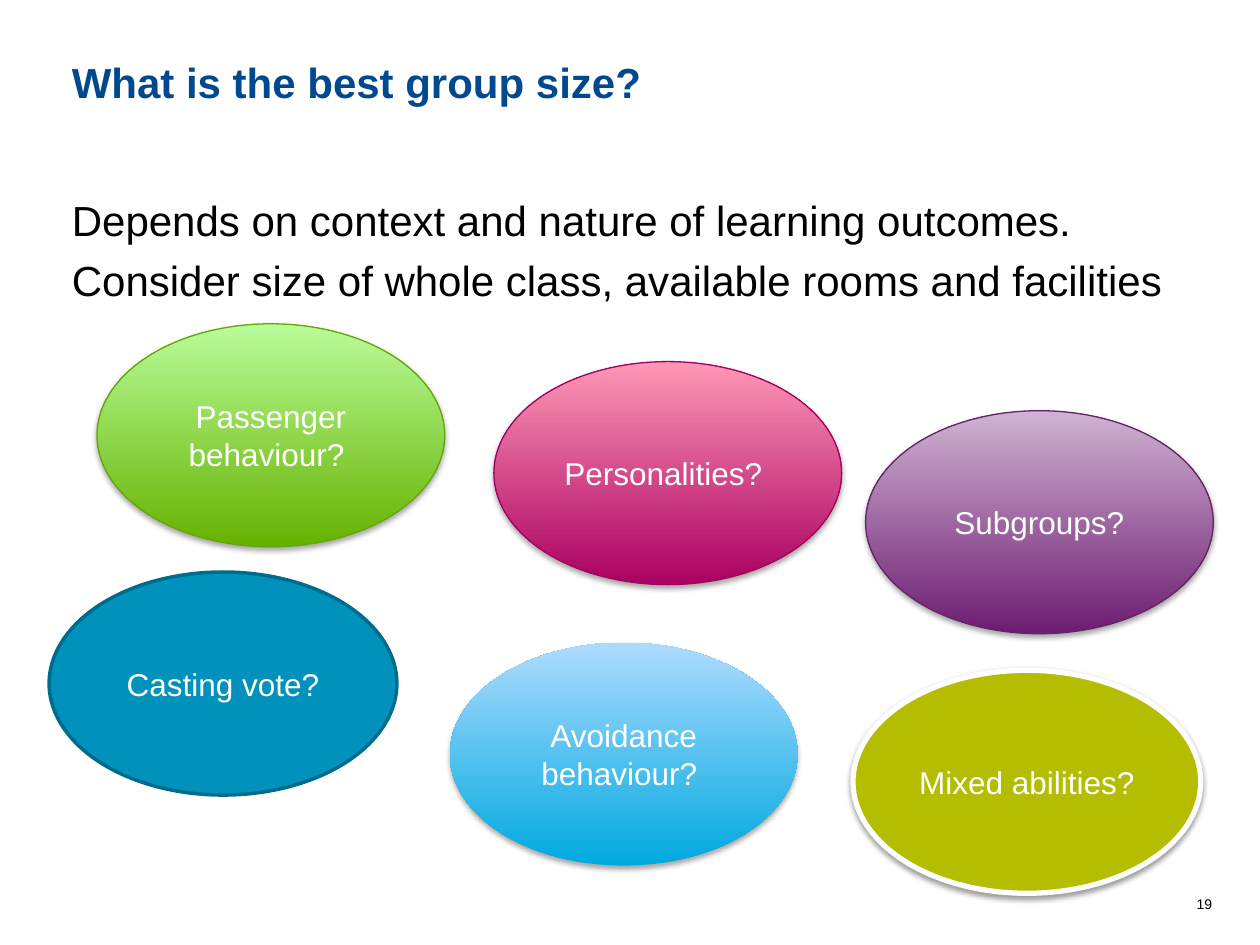
from lxml.etree import SubElement
from pptx import Presentation
from pptx.dml.color import RGBColor
from pptx.enum.shapes import MSO_SHAPE
from pptx.enum.text import MSO_ANCHOR, MSO_AUTO_SIZE, PP_ALIGN
from pptx.oxml.ns import qn
from pptx.util import Inches, Pt

BLACK = RGBColor(0x00, 0x00, 0x00)
WHITE = RGBColor(0xFF, 0xFF, 0xFF)
NAVY = RGBColor(0x01, 0x49, 0x8E)
GREEN, PALE_GREEN, GREEN_EDGE = (
    RGBColor(0x66, 0xB2, 0x00), RGBColor(0xBA, 0xFC, 0x9A), RGBColor(0x62, 0xA7, 0x07))
PINK, PALE_PINK, PINK_EDGE = (
    RGBColor(0xAA, 0x00, 0x61), RGBColor(0xFF, 0x98, 0xB6), RGBColor(0xA6, 0x00, 0x5F))
PURPLE, PALE_PURPLE, PURPLE_EDGE = (
    RGBColor(0x6D, 0x1C, 0x71), RGBColor(0xCF, 0xB3, 0xD2), RGBColor(0x63, 0x24, 0x66))
SKY, PALE_SKY = RGBColor(0x00, 0xA9, 0xE0), RGBColor(0xAE, 0xDB, 0xFF)
TEAL, TEAL_EDGE = RGBColor(0x00, 0x92, 0xBC), RGBColor(0x00, 0x6C, 0x8B)
OLIVE = RGBColor(0xB5, 0xBD, 0x00)

# The slide is measured on a grid of 100 columns by 75 rows
COLUMNS, ROWS = 100, 75
OVAL_SIZE = (27.6, 17.7)
SOFT_SHADOW = (35, 1.8)  # opacity in percent, distance in points
FIRM_SHADOW = (38, 1.6)

# Text, column, row, fill colours from bottom to top, edge, edge width, shadow
OVALS = [
    ("Passenger behaviour? ", 7.7, 25.7, (GREEN, PALE_GREEN), GREEN_EDGE, 0.75, SOFT_SHADOW),
    ("Personalities? ", 39.2, 28.7, (PINK, PALE_PINK), PINK_EDGE, 0.75, SOFT_SHADOW),
    ("Avoidance behaviour? ", 35.7, 51, (SKY, PALE_SKY), None, 0, SOFT_SHADOW),
    ("Mixed abilities? ", 67.7, 53.2, (OLIVE,), WHITE, 3, FIRM_SHADOW),
    ("Subgroups?", 68.7, 32.6, (PURPLE, PALE_PURPLE), PURPLE_EDGE, 0.75, SOFT_SHADOW),
    ("Casting vote?", 3.9, 45.4, (TEAL,), TEAL_EDGE, 2, None),
]


class SlideBuilder:
    font_name = "Arial"

    def __init__(self, deck):
        self.column = deck.slide_width / COLUMNS
        self.row = deck.slide_height / ROWS
        self.page = deck.slides.add_slide(deck.slide_layouts[1])

    def area(self, left, top, width, height):
        return [round(share * unit) for share, unit in zip(
            (left, top, width, height), (self.column, self.row) * 2)]

    def set_text(self, shape, lines, size, color, bold=False,
                 align=PP_ALIGN.LEFT, anchor=MSO_ANCHOR.TOP):
        frame = shape.text_frame
        frame.text = "\n".join(lines)
        layout = {"word_wrap": True, "auto_size": MSO_AUTO_SIZE.NONE,
                  "vertical_anchor": anchor}
        for name, value in layout.items():
            setattr(frame, name, value)
        for index, para in enumerate(frame.paragraphs):
            para.alignment = align
            para.space_before = Pt(6 if index else 0)
            style = {"name": self.font_name, "size": Pt(size), "bold": bold}
            for span in para.runs:
                for name, value in style.items():
                    setattr(span.font, name, value)
                span.font.color.rgb = color

    def placeholder(self, index, area, lines, **style):
        box = self.page.placeholders[index]
        for name, value in zip(("left", "top", "width", "height"), self.area(*area)):
            setattr(box, name, value)
        self.set_text(box, lines, **style)
        for para in box.text_frame.paragraphs:
            properties = para._p.get_or_add_pPr()
            for name in ("marL", "indent"):
                properties.set(name, "0")
            SubElement(properties, qn("a:buNone"))

    def label(self, area, text, **style):
        self.set_text(self.page.shapes.add_textbox(*self.area(*area)), [text], **style)

    def oval(self, text, left, top, fills, edge, edge_width, shadow):
        oval = self.page.shapes.add_shape(
            MSO_SHAPE.OVAL, *self.area(left, top, *OVAL_SIZE))
        if len(fills) > 1:
            oval.fill.gradient()
            oval.fill.gradient_angle = 90
            for stop, color in zip(oval.fill.gradient_stops, fills):
                stop.color.rgb = color
        else:
            oval.fill.solid()
            oval.fill.fore_color.rgb = fills[0]
        if edge is None:
            oval.line.fill.background()
        else:
            oval.line.color.rgb = edge
            oval.line.width = Pt(edge_width)
        oval.shadow.inherit = False
        if shadow:
            self.cast_shadow(oval, *shadow)
        self.set_text(oval, [text], size=18, color=WHITE,
                      align=PP_ALIGN.CENTER, anchor=MSO_ANCHOR.MIDDLE)

    def cast_shadow(self, shape, opacity, distance):
        effects = shape._element.spPr.find(qn("a:effectLst"))
        shadow = SubElement(effects, qn("a:outerShdw"), blurRad=str(Pt(3.1)),
                            dist=str(Pt(distance)), dir="5400000", rotWithShape="0")
        color = SubElement(shadow, qn("a:srgbClr"), val=str(BLACK))
        SubElement(color, qn("a:alpha"), val=str(opacity * 1000))


def main():
    deck = Presentation()
    deck.slide_width, deck.slide_height = Inches(10), Inches(7.5)
    builder = SlideBuilder(deck)

    # Title and opening statements
    builder.placeholder(0, (4.7, 4, 90.6, 5), ["What is the best group size?"],
                        size=24, color=NAVY, bold=True)
    builder.placeholder(1, (4.7, 14.9, 90.6, 49.2), [
        "Depends on context and nature of learning outcomes.",
        "Consider size of whole class, available rooms and facilities",
    ], size=24, color=BLACK)

    # Page number
    builder.label((53.9, 70.6, 43.3, 2.4), "19", size=8, color=BLACK,
                  align=PP_ALIGN.RIGHT)

    # Factors to consider
    for oval in OVALS:
        builder.oval(*oval)

    deck.save("out.pptx")


if __name__ == "__main__":
    main()
